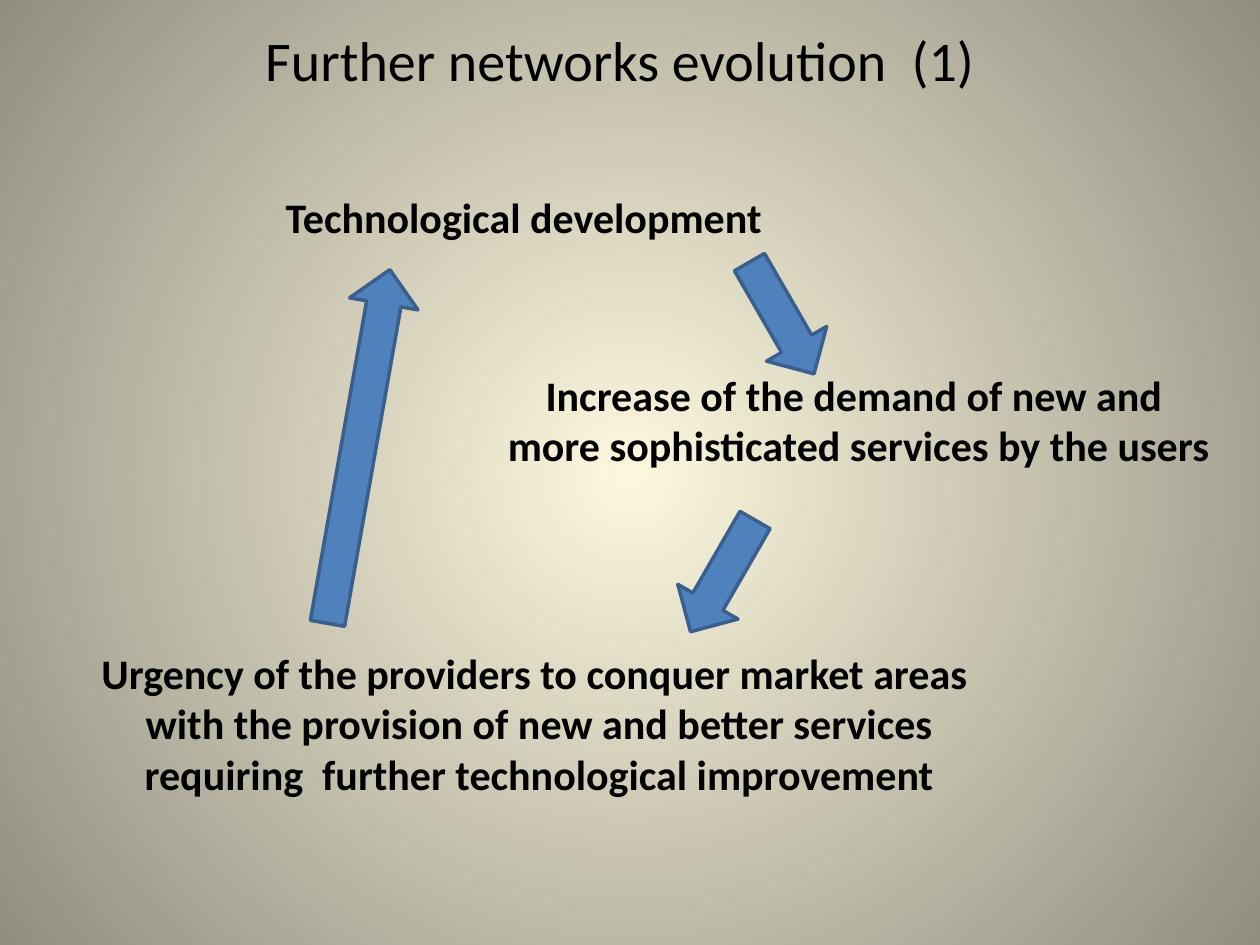
from dataclasses import dataclass

from lxml import etree
from pptx import Presentation
from pptx import util as u
from pptx.dml.color import RGBColor
from pptx.enum import shapes, text
from pptx.oxml.ns import qn


@dataclass(frozen=True)
class Theme:
    font: str = "Calibri"
    ink: str = "000000"
    glow: str = "FCF7DD"
    edge: str = "918E81"
    arrow: str = "4F81BD"
    outline: str = "3A5F8C"
    title_size: int = 32
    body_size: int = 24


theme = Theme()


def add_text(s, lines, left, top, width, height, size=theme.body_size, bold=True,
             align=text.PP_ALIGN.CENTER, anchor=text.MSO_ANCHOR.TOP, wrap=False):
    """Add a text box with one paragraph per line; lengths in cm."""
    tf = s.shapes.add_textbox(u.Cm(left), u.Cm(top), u.Cm(width), u.Cm(height)).text_frame
    tf.word_wrap = wrap
    tf.vertical_anchor = anchor
    for i, line in enumerate(lines):
        p = tf.paragraphs[0] if i == 0 else tf.add_paragraph()
        p.alignment = align
        r = p.add_run()
        r.text = line
        r.font.name = theme.font
        r.font.size = u.Pt(size)
        r.font.bold = bold
        r.font.color.rgb = RGBColor.from_string(theme.ink)


prs = Presentation()
prs.slide_width, prs.slide_height = u.Cm(25.4), u.Cm(19.05)
s = prs.slides.add_slide(prs.slide_layouts[6])

# Background: gradient spreading in circles from the centre
fill = s.background.fill
fill.gradient()
for stop, color in zip(fill.gradient_stops, (theme.glow, theme.edge)):
    stop.color.rgb = RGBColor.from_string(color)
grad = s.element.find(".//" + qn("a:gradFill"))
lin = grad.find(qn("a:lin"))
circle = etree.Element(qn("a:path"), path="circle")
etree.SubElement(circle, qn("a:fillToRect"), l="50000", t="50000", r="50000", b="50000")
grad.replace(lin, circle)

# Title
add_text(s, ["Further networks evolution  (1)"], 0.5, 0, 24, 2.4,
         size=theme.title_size, bold=False, anchor=text.MSO_ANCHOR.MIDDLE, wrap=True)

# Stages of the cycle
add_text(s, ["Technological development"], 5.51, 3.73, 10.2, 1.28,
         align=text.PP_ALIGN.LEFT)
add_text(s, ["Increase of the demand of new and ",
             "more sophisticated services by the users"], 9.9, 7.32, 14.82, 2.31)
add_text(s, ["Urgency of the providers to conquer market areas ",
             "with the provision of new and better services",
             "requiring  further technological improvement"], 1.7, 12.93, 18.34, 3.33)

# Arrows from stage to stage: left, top, length, rotation
for left, top, length, rotation in [(15.06, 5.11, 2.6, 330),
                                    (13.87, 10.31, 2.6, 30),
                                    (6.53, 5.38, 7.24, 190)]:
    sp = s.shapes.add_shape(shapes.MSO_SHAPE.DOWN_ARROW, u.Cm(left), u.Cm(top),
                            u.Cm(1.4), u.Cm(length))
    sp.rotation = rotation
    sp.shadow.inherit = False
    sp.fill.solid()
    sp.fill.fore_color.rgb = RGBColor.from_string(theme.arrow)
    sp.line.color.rgb = RGBColor.from_string(theme.outline)
    sp.line.width = u.Pt(2)

prs.save("out.pptx")
